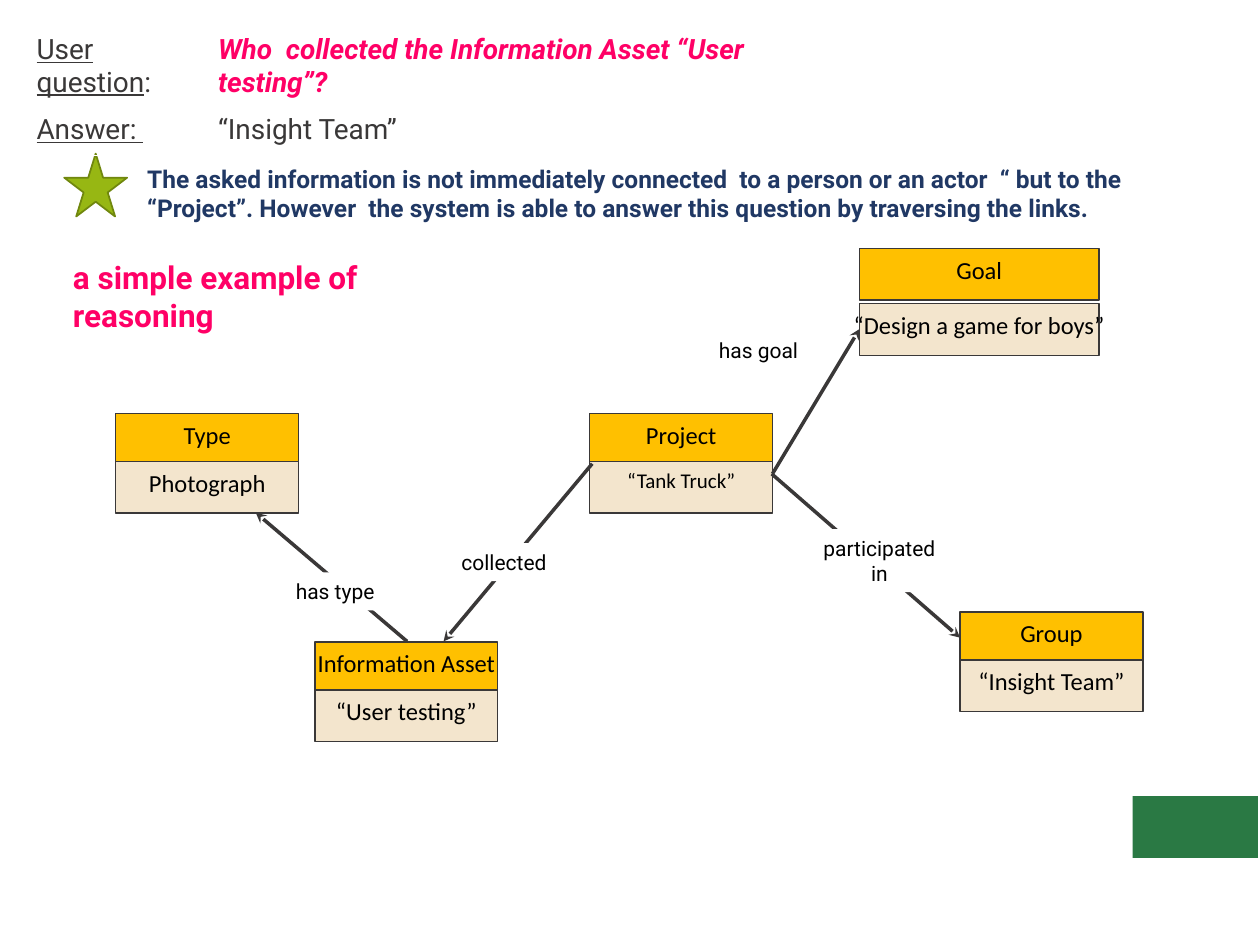
from lxml import etree
from pptx import Presentation
from pptx.dml.color import RGBColor
from pptx.enum import shapes, text
from pptx.oxml import ns
from pptx.util import Pt

GOLD = RGBColor(0xFF, 0xC0, 0x00)
CREAM = RGBColor(0xF3, 0xE5, 0xCD)
DARK = RGBColor(0x3A, 0x38, 0x38)
BLACK = RGBColor(0, 0, 0)
WHITE = RGBColor(0xFF, 0xFF, 0xFF)
PINK = RGBColor(0xFF, 0x00, 0x66)
NAVY = RGBColor(0x20, 0x38, 0x64)
GREEN = RGBColor(0x2A, 0x79, 0x44)
LIME = RGBColor(0x97, 0xB7, 0x13)
OLIVE = RGBColor(0x70, 0x87, 0x0E)
RECT = shapes.MSO_SHAPE.RECTANGLE

prs = Presentation()
prs.slide_width, prs.slide_height = Pt(720), Pt(540)
slide = prs.slides.add_slide(prs.slide_layouts[6])


def draw(kind, box, fill, line=None, width=0.75):
    shape = slide.shapes.add_shape(kind, *map(Pt, box))
    shape.shadow.inherit = False
    shape.fill.solid()
    shape.fill.fore_color.rgb = fill
    if line is None:
        shape.line.fill.background()
    else:
        shape.line.color.rgb = line
        shape.line.width = Pt(width)
    return shape


def write(frame, words, size, color, name="Roboto", side=7.2, wrap=True):
    """Fill a text frame with one run and return its paragraph."""
    frame.text = words
    frame.word_wrap = wrap
    frame.vertical_anchor = text.MSO_ANCHOR.TOP
    frame.margin_left = frame.margin_right = Pt(side)
    frame.margin_top = frame.margin_bottom = Pt(3.6)
    para = frame.paragraphs[0]
    font = para.runs[0].font
    font.name, font.size, font.color.rgb = name, Pt(size), color
    return para


draw(RECT, (647.3, 455, 71.5, 35.3), GREEN)

# Entities: a gold class name above a cream instance
nodes = [
    ("Project", "“Tank Truck”", 337, 236.2, 104.5, 27.5, 12),
    ("Information Asset", "“User testing”", 180, 366.8, 104.5, 27.5, 14),
    ("Group", "“Insight Team”", 548.6, 349.7, 104.5, 27.5, 14),
    ("Type", "Photograph", 66.2, 236.2, 104.5, 27.5, 14),
    ("Goal", "“Design a game for boys”", 491.2, 142, 136.8, 31.5, 14),
]
for title, value, x, y, w, step, size in nodes:
    rows = [(title, y, GOLD, 14), (value, y + step, CREAM, size)]
    for words, top, fill, pts in rows:
        box = draw(RECT, (x, top, w, 29.5), fill, DARK)
        para = write(box.text_frame, words, pts, BLACK, "Calibri", 4.3, False)
        para.alignment = text.PP_ALIGN.CENTER

# Relations: an arrow from x1, y1 to x2, y2, then its label
links = [
    ("participated in", 441, 270.8, 548.6, 364.4, 468, 302.4, 36),
    ("collected", 338.4, 265, 253.5, 366.5, 253.5, 310.3, 21.8),
    ("has type", 232.6, 366.5, 146.2, 293, 157, 327, 21.8),
    ("has goal", 441.4, 270.8, 491.2, 188, 398.9, 189.4, 21.8),
]
for words, x1, y1, x2, y2, x, y, h in links:
    arrow = slide.shapes.add_connector(
        shapes.MSO_CONNECTOR.STRAIGHT, Pt(x1), Pt(y1), Pt(x2), Pt(y2))
    arrow.line.color.rgb = DARK
    arrow.line.width = Pt(2)
    etree.SubElement(arrow.line._get_or_add_ln(), ns.qn("a:tailEnd"),
                     type="stealth")
    etree.SubElement(arrow._element.spPr, ns.qn("a:effectLst"))
    label = draw(RECT, (x, y, 69.1, h), WHITE)
    para = write(label.text_frame, words, 12, BLACK, side=1.4)
    para.alignment = text.PP_ALIGN.CENTER

# Remark and heading
remark = slide.shapes.add_textbox(Pt(77), Pt(90), Pt(586.8), Pt(41))
para = write(
    remark.text_frame,
    "The asked information is not immediately connected  to a person or an "
    "actor  “ but to the “Project”. However  the system is able to answer "
    "this question by traversing the links.", 14, NAVY)
para.runs[0].font.bold = True

head = slide.shapes.add_textbox(Pt(34.6), Pt(154.8), Pt(222.5), Pt(28.8))
para = write(head.text_frame, "a simple example of reasoning", 18, PINK)
para.runs[0].font.bold = True
head.text_frame.vertical_anchor = text.MSO_ANCHOR.MIDDLE

draw(shapes.MSO_SHAPE.STAR_5_POINT, (36.7, 87.8, 36, 36), LIME, OLIVE, 1)

# Question and answer
table = slide.shapes.add_table(
    2, 2, Pt(13.7), Pt(15.8), Pt(480.3), Pt(53)).table
table.first_row = table.horz_banding = False
for col, w in zip(table.columns, (103.7, 376.6)):
    col.width = Pt(w)
for row, h in zip(table.rows, (25.4, 27.6)):
    row.height = Pt(h)

# Each run: words, colour, underlined, bold italic
cells = [
    [("User question", DARK, True, False), (":", DARK, False, False)],
    [("Who  collected the Information Asset “User testing”?",
      PINK, False, True)],
    [("Answer: ", DARK, True, False)],
    [("“Insight Team”", DARK, False, False)],
]
for cell, runs in zip(table.iter_cells(), cells):
    cell.fill.background()
    for words, color, under, strong in runs:
        run = cell.text_frame.paragraphs[0].add_run()
        run.text = words
        font = run.font
        font.name, font.size, font.color.rgb = "Roboto", Pt(16), color
        font.underline = under
        font.bold = font.italic = strong

prs.save("out.pptx")
